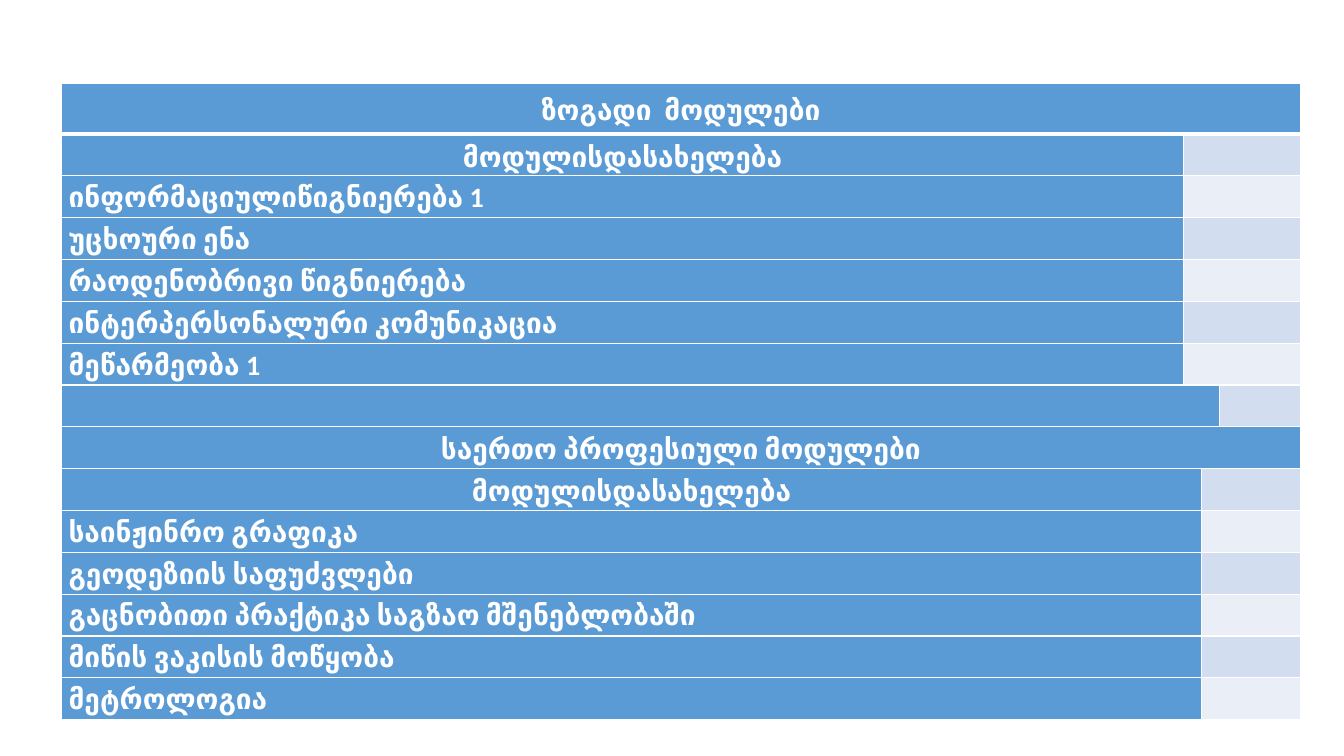
from lxml import etree
from pptx import Presentation
from pptx import util as u
from pptx.dml.color import RGBColor
from pptx.enum import text
from pptx.oxml.ns import qn

BLUE, WHITE = "5B9BD5", "FFFFFF"
BANDS = ["EAEFF7", "D2DEEF"]
COLUMN_WIDTHS = [11.13, 0.12, 0.12, 0.8]
TABLE_HEIGHT, TITLE_HEIGHT = 6.31, 0.5

# Row wording, number of columns the blue cell spans, centred or not
ROWS = [
    ("ზოგადი  მოდულები", 4, True),
    ("მოდულისდასახელება", 1, True),
    ("ინფორმაციულიწიგნიერება 1", 1, False),
    ("უცხოური ენა", 1, False),
    ("რაოდენობრივი წიგნიერება", 1, False),
    ("ინტერპერსონალური კომუნიკაცია", 1, False),
    ("მეწარმეობა 1", 1, False),
    ("", 3, False),
    ("საერთო პროფესიული მოდულები", 4, True),
    ("მოდულისდასახელება", 2, True),
    ("საინჟინრო გრაფიკა", 2, False),
    ("გეოდეზიის საფუძვლები", 2, False),
    ("გაცნობითი პრაქტიკა საგზაო მშენებლობაში", 2, False),
    ("მიწის ვაკისის მოწყობა", 2, False),
    ("მეტროლოგია", 2, False),
]


def color(value):
    return RGBColor.from_string(value)


def format_cell(cell, fill, bottom_width):
    margins = {"margin_left": 0.07, "margin_right": 0.07, "margin_top": 0, "margin_bottom": 0}
    for name, value in margins.items():
        setattr(cell, name, u.Inches(value))
    font = cell.text_frame.paragraphs[0].font
    for name, value in {"size": u.Pt(20), "bold": True, "name": "Calibri"}.items():
        setattr(font, name, value)
    font.color.rgb = color(WHITE)

    # Borders come before the fill in the cell properties
    properties = cell._tc.get_or_add_tcPr()
    for side, width in {"lnL": 1, "lnR": 1, "lnT": 1, "lnB": bottom_width}.items():
        line = etree.SubElement(properties, qn("a:" + side), w=str(u.Pt(width)))
        solid = etree.SubElement(line, qn("a:solidFill"))
        etree.SubElement(solid, qn("a:srgbClr"), val=WHITE)
    cell.fill.solid()
    cell.fill.fore_color.rgb = color(fill)


presentation = Presentation()
presentation.slide_width = u.Inches(13.33)
presentation.slide_height = u.Inches(7.5)
slide = presentation.slides.add_slide(presentation.slide_layouts[6])

# Table grid
table = slide.shapes.add_table(
    len(ROWS), len(COLUMN_WIDTHS),
    u.Inches(0.61), u.Inches(0.83), u.Inches(sum(COLUMN_WIDTHS)), u.Inches(TABLE_HEIGHT),
).table
for column, width in zip(table.columns, COLUMN_WIDTHS):
    column.width = u.Inches(width)
for row in table.rows:
    row.height = u.Inches((TABLE_HEIGHT - TITLE_HEIGHT) / (len(ROWS) - 1))
table.rows[0].height = u.Inches(TITLE_HEIGHT)

# Module rows
last = len(COLUMN_WIDTHS) - 1
for index, (wording, span, centred) in enumerate(ROWS):
    for column in range(len(COLUMN_WIDTHS)):
        fill = BLUE if column < span else BANDS[index % 2]
        format_cell(table.cell(index, column), fill, 3 if index == 0 else 1)

    name_cell = table.cell(index, 0)
    paragraph = name_cell.text_frame.paragraphs[0]
    paragraph.line_spacing = 1.15
    if wording:
        run = paragraph.add_run()
        run.text = wording
        for name, value in {"size": u.Pt(20), "bold": True, "name": "Calibri"}.items():
            setattr(run.font, name, value)
        run.font.color.rgb = color(WHITE)
    if centred:
        paragraph.alignment = text.PP_ALIGN.CENTER
        name_cell.vertical_anchor = text.MSO_ANCHOR.MIDDLE

    # Blue cell on the left, banded cell on the right
    if span > 1:
        name_cell.merge(table.cell(index, span - 1))
    if span < last:
        table.cell(index, span).merge(table.cell(index, last))

presentation.save("out.pptx")
